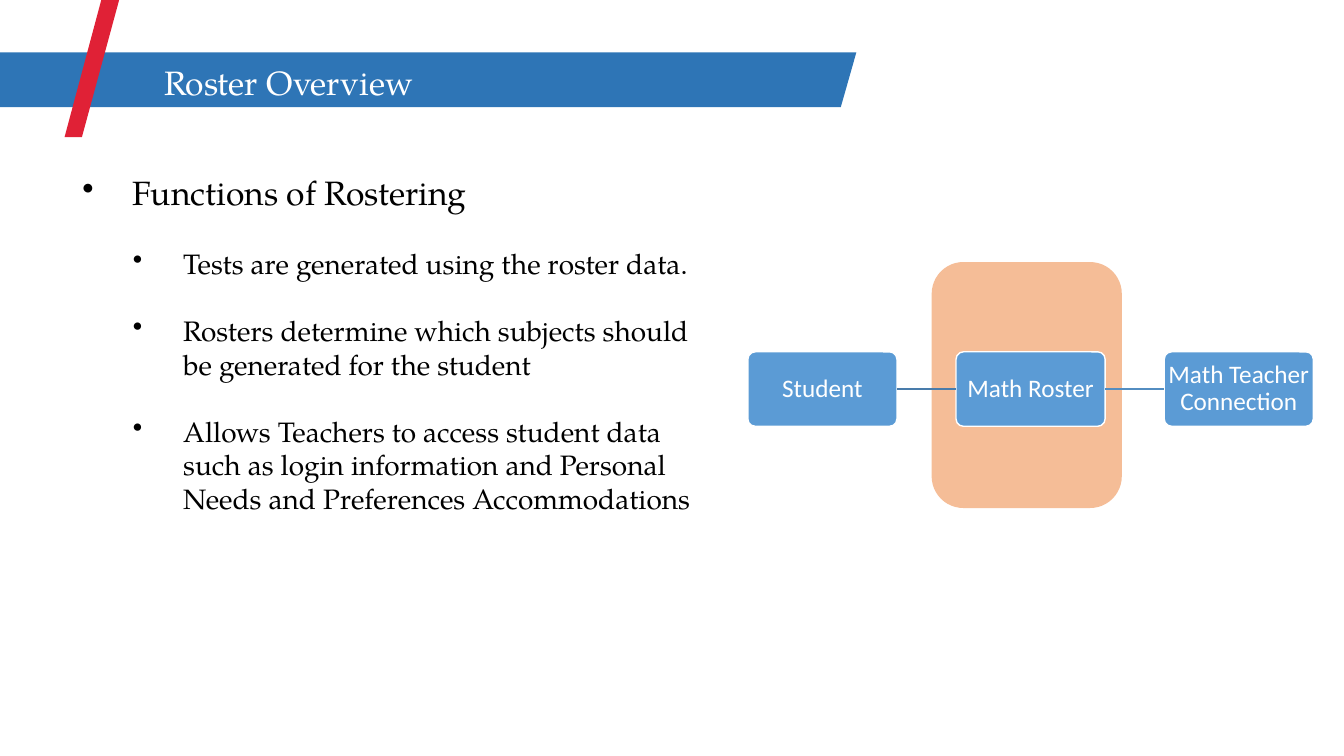
from itertools import pairwise

from pptx import Presentation
from pptx.dml.color import RGBColor
from pptx.enum.shapes import MSO_CONNECTOR, MSO_SHAPE
from pptx.enum.text import MSO_ANCHOR, MSO_AUTO_SIZE, PP_ALIGN
from pptx.oxml.ns import qn
from pptx.util import Pt
from lxml import etree

ROUNDED = MSO_SHAPE.ROUNDED_RECTANGLE
STRAIGHT = MSO_CONNECTOR.STRAIGHT
MIDDLE = MSO_ANCHOR.MIDDLE
CENTER = PP_ALIGN.CENTER
GROW = MSO_AUTO_SIZE.SHAPE_TO_FIT_TEXT
LEFT_SIDE, RIGHT_SIDE = 1, 3

SERIF, SANS = "TeX Gyre Pagella", "Calibri"
COLORS = {
    "banner": "2E75B6", "stripe": "E02136", "highlight": "ED7D31",
    "node": "5B9BD5", "white": "FFFFFF", "black": "000000",
}
LINK_COLORS = ["497CAB", "538DC1"]

# Text, bullet level
FUNCTIONS = [
    ("Functions of Rostering", 0),
    ("Tests are generated using the roster data.", 1),
    ("Rosters determine which subjects should be generated for the student", 1),
    ("Allows Teachers to access student data such as login information "
     "and Personal Needs and Preferences Accommodations", 1),
]
LEVEL_SIZES = [24, 20]
BULLET_INDENT = 36
BULLET_GAP = 24

ROSTER_STEPS = ["Student", "Math Roster", "Math Teacher Connection"]
STEP_LEFT, STEP_TOP, STEP_PITCH = 534.2, 251.3, 148.7
STEP_WIDTH, STEP_HEIGHT = 106.5, 53.2


def apply(target, formats):
    for name, value in formats.items():
        setattr(target, name, value)


def rgb(color):
    return RGBColor.from_string(color)


def fill_shape(shape, color):
    shape.shadow.inherit = False
    shape.fill.solid()
    shape.fill.fore_color.rgb = rgb(color)
    shape.line.fill.background()


def write(paragraph, text, size, font, color):
    run = paragraph.add_run()
    run.text = text
    apply(run.font, {"size": Pt(size), "name": font})
    run.font.color.rgb = rgb(color)


def add_polygon(slide, corners, color):
    points = [(Pt(x), Pt(y)) for x, y in corners]
    builder = slide.shapes.build_freeform(*points[0])
    builder.add_line_segments(points[1:], close=True)
    fill_shape(builder.convert_to_shape(), color)


def add_text_frame(slide, left, top, width, height):
    box = slide.shapes.add_textbox(Pt(left), Pt(top), Pt(width), Pt(height))
    apply(box.text_frame, {"word_wrap": True, "auto_size": GROW})
    return box.text_frame


def add_bullets(frame, items):
    for index, (text, level) in enumerate(items):
        paragraph = frame.paragraphs[0] if index == 0 else frame.add_paragraph()
        paragraph.level = level
        properties = paragraph._p.get_or_add_pPr()
        properties.set("marL", str(Pt(BULLET_INDENT * (level + 1))))
        properties.set("indent", str(-Pt(BULLET_INDENT)))
        etree.SubElement(properties, qn("a:buChar"), char="•")
        if index:
            paragraph.space_before = Pt(BULLET_GAP)
        write(paragraph, text, LEVEL_SIZES[level], SERIF, COLORS["black"])


def add_highlight(slide, left, top, width, height):
    panel = slide.shapes.add_shape(
        ROUNDED, Pt(left), Pt(top), Pt(width), Pt(height))
    fill_shape(panel, COLORS["highlight"])
    # Half-transparent fill
    tint = panel._element.spPr.find(qn("a:solidFill"))[0]
    etree.SubElement(tint, qn("a:alpha"), val="50000")


def add_step(slide, index, label):
    step = slide.shapes.add_shape(
        ROUNDED, Pt(STEP_LEFT + index * STEP_PITCH), Pt(STEP_TOP),
        Pt(STEP_WIDTH), Pt(STEP_HEIGHT))
    step.adjustments[0] = 0.1
    fill_shape(step, COLORS["node"])
    step.line.color.rgb = rgb(COLORS["white"])
    step.line.width = Pt(1)
    frame = step.text_frame
    apply(frame, {"word_wrap": True, "vertical_anchor": MIDDLE})
    apply(frame, {f"margin_{side}": Pt(0.9)
                  for side in ("left", "top", "right", "bottom")})
    paragraph = frame.paragraphs[0]
    apply(paragraph, {"alignment": CENTER, "line_spacing": 0.9})
    write(paragraph, label, 18, SANS, COLORS["white"])
    return step


def link_steps(slide, start, end, color):
    link = slide.shapes.add_connector(STRAIGHT, 0, 0, 0, 0)
    link.begin_connect(start, RIGHT_SIDE)
    link.end_connect(end, LEFT_SIDE)
    link.line.color.rgb = rgb(color)
    link.line.width = Pt(1)
    etree.SubElement(link._element.spPr, qn("a:effectLst"))


def main():
    deck = Presentation()
    apply(deck, {"slide_width": Pt(960), "slide_height": Pt(540)})
    slide = deck.slides.add_slide(deck.slide_layouts[6])

    # Banner and stripe
    add_polygon(slide, [(-11.5, 37.4), (611.7, 37.4), (600.6, 76.5),
                        (-11.5, 76.5)], COLORS["banner"])
    add_polygon(slide, [(46.1, 98), (84.3, -44.6), (97.2, -44.6),
                        (58.5, 98)], COLORS["stripe"])

    add_highlight(slide, 665.5, 187.2, 135.8, 175.7)

    # Title and functions
    title = add_text_frame(slide, 110.2, 41, 481, 36)
    write(title.paragraphs[0], "Roster Overview", 24, SERIF, COLORS["white"])
    add_bullets(add_text_frame(slide, 51.8, 119.5, 453.6, 283.7), FUNCTIONS)

    # Roster chain
    steps = [add_step(slide, i, label) for i, label in enumerate(ROSTER_STEPS)]
    for (start, end), color in zip(pairwise(steps), LINK_COLORS):
        link_steps(slide, start, end, color)

    deck.save("out.pptx")


if __name__ == "__main__":
    main()
